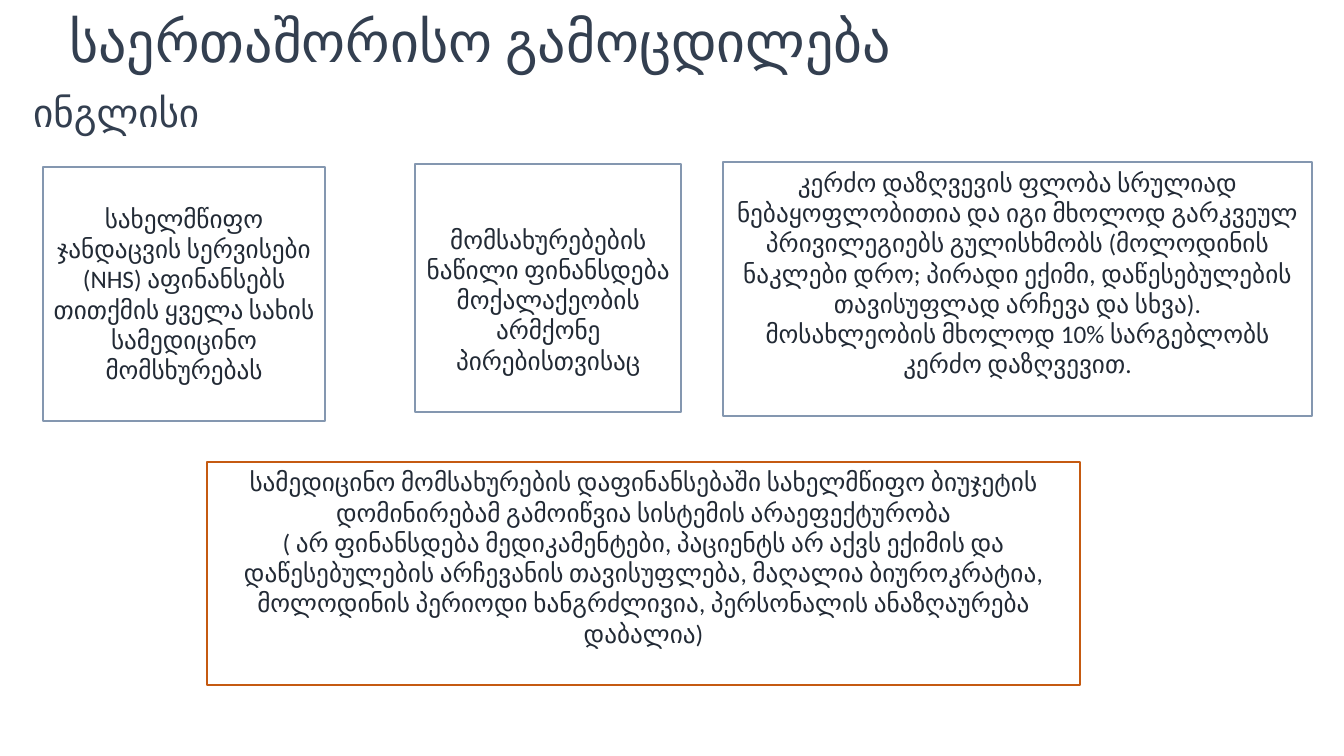
import pptx
import pptx.dml.color
import pptx.enum.shapes
import pptx.enum.text
import pptx.util

Pt = pptx.util.Pt
ALIGN = pptx.enum.text.PP_ALIGN
ANCHOR = pptx.enum.text.MSO_ANCHOR

COLORS = {
    "heading": "333F50",
    "body": "222A35",
    "fact": "8497B0",
    "conclusion": "C55A11",
}

FACTS = [
    ((31, 119.5, 200.9, 181.4), 25.6, [
        "სახელმწიფო ჯანდაცვის სერვისები (NHS) აფინანსებს თითქმის ყველა სახის "
        "სამედიცინო მომსხურებას",
    ]),
    ((296.6, 117.4, 190.1, 177.1), 42.6, [
        "მომსახურებების ნაწილი ფინანსდება მოქალაქეობის არმქონე პირებისთვისაც",
    ]),
    ((516.2, 115.9, 421.2, 181.4), 3.6, [
        "კერძო დაზღვევის ფლობა სრულიად ნებაყოფლობითია და იგი მხოლოდ გარკვეულ "
        "პრივილეგიებს გულისხმობს (მოლოდინის ნაკლები დრო; პირადი ექიმი, "
        "დაწესებულების თავისუფლად არჩევა და სხვა).",
        "მოსახლეობის მხოლოდ 10% სარგებლობს კერძო დაზღვევით.",
    ]),
]

CONCLUSION = [
    "სამედიცინო მომსახურების დაფინანსებაში სახელმწიფო ბიუჯეტის დომინირებამ "
    "გამოიწვია სისტემის არაეფექტურობა",
    "( არ ფინანსდება მედიკამენტები, პაციენტს არ აქვს ექიმის და დაწესებულების "
    "არჩევანის თავისუფლება, მაღალია ბიუროკრატია, მოლოდინის პერიოდი "
    "ხანგრძლივია, პერსონალის ანაზღაურება დაბალია)",
]


class SlideBuilder:
    font = "Calibri"
    text_size = 18
    line_width = 1.5

    def __init__(self, slide):
        self.slide = slide

    def color(self, name):
        return pptx.dml.color.RGBColor.from_string(COLORS[name])

    def apply(self, target, formats):
        for name, value in formats.items():
            setattr(target, name, value)

    def fill_text(self, box, texts, size, color, frame_format, para_format):
        frame = box.text_frame
        self.apply(frame, {"word_wrap": True, **frame_format})
        for index, text in enumerate(texts):
            para = frame.add_paragraph() if index else frame.paragraphs[0]
            self.apply(para, para_format)
            span = para.add_run()
            span.text = text
            self.apply(span.font, {"name": self.font, "size": Pt(size)})
            span.font.color.rgb = self.color(color)

    def heading(self, place, text, size, anchor):
        box = self.slide.shapes.add_textbox(*map(Pt, place))
        self.fill_text(box, [text], size, "heading",
                       {"vertical_anchor": anchor},
                       {"alignment": ALIGN.LEFT, "line_spacing": 0.9})

    def framed_text(self, place, texts, outline, top_margin=3.6):
        box = self.slide.shapes.add_shape(
            pptx.enum.shapes.MSO_SHAPE.RECTANGLE, *map(Pt, place))
        box.shadow.inherit = False
        box.fill.background()
        box.line.color.rgb = self.color(outline)
        box.line.width = Pt(self.line_width)
        self.fill_text(box, texts, self.text_size, "body",
                       {"vertical_anchor": ANCHOR.TOP, "margin_top": Pt(top_margin)},
                       {"alignment": ALIGN.CENTER})


def main():
    deck = pptx.Presentation()
    deck.slide_width, deck.slide_height = Pt(960), Pt(540)
    builder = SlideBuilder(deck.slides.add_slide(deck.slide_layouts[6]))

    builder.heading((42.5, 0, 864, 63.4), "საერთაშორისო გამოცდილება", 40, ANCHOR.MIDDLE)
    builder.heading((16.6, 63.4, 559.4, 372.2), "ინგლისი", 28, ANCHOR.TOP)
    for place, top_margin, texts in FACTS:
        builder.framed_text(place, texts, "fact", top_margin)
    builder.framed_text((147.6, 329.8, 624.2, 159.8), CONCLUSION, "conclusion")

    deck.save("out.pptx")


if __name__ == "__main__":
    main()
